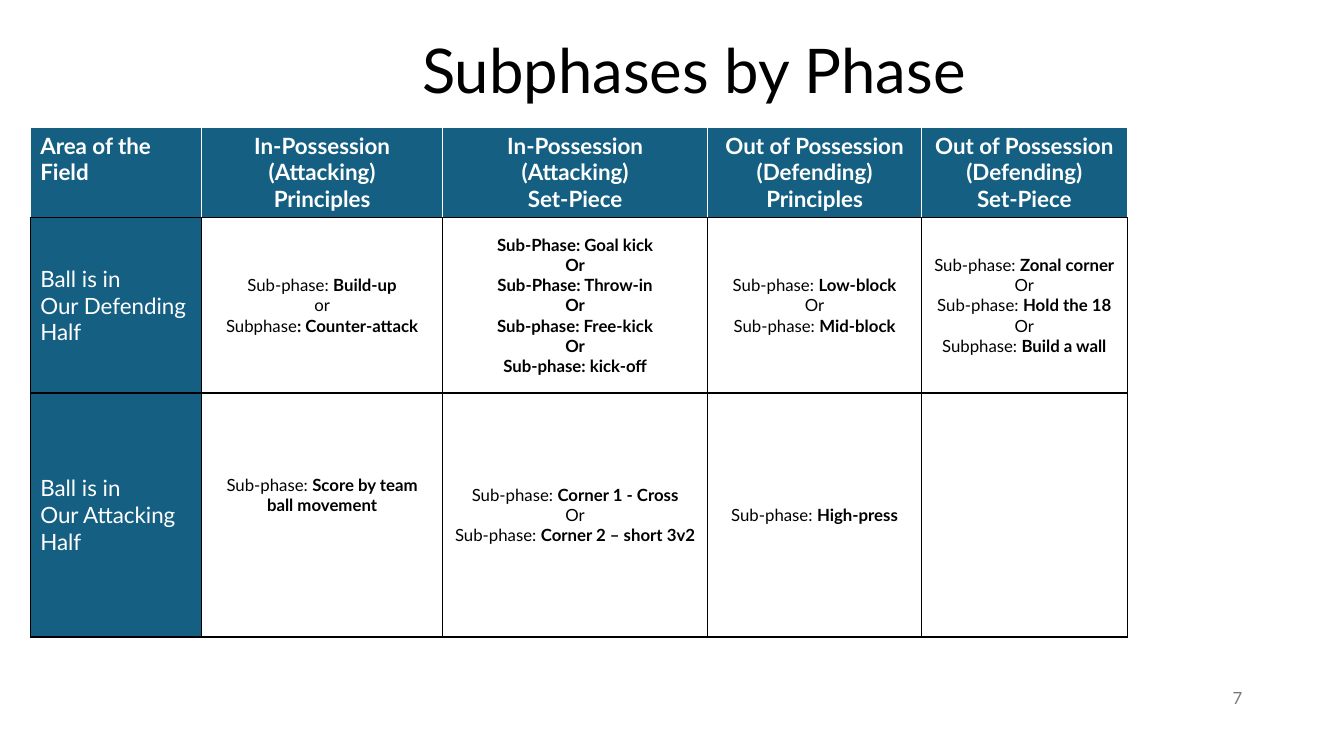
from lxml.etree import SubElement
from pptx import Presentation
from pptx.dml.color import RGBColor
from pptx.enum.text import MSO_ANCHOR, PP_ALIGN
from pptx.oxml.ns import qn
from pptx.util import Inches, Pt

FONT = "Lato"
BLACK = RGBColor(0x00, 0x00, 0x00)
WHITE = RGBColor(0xFF, 0xFF, 0xFF)
TEAL = RGBColor(0x15, 0x60, 0x82)
GREY = RGBColor(0x79, 0x79, 0x79)

COLUMN_WIDTHS = [1.7, 2.39, 2.63, 2.12, 2.04]
ROW_HEIGHTS = [0.81, 1.74, 2.42]

# Each cell is a list of paragraphs; text between asterisks is bold.
HEADINGS = [
    ["*Area of the Field*"],
    ["*In-Possession (Attacking)*", "*Principles*"],
    ["*In-Possession*", "*(Attacking)*", "*Set-Piece*"],
    ["*Out of Possession (Defending)*", "*Principles*"],
    ["*Out of Possession (Defending)*", "*Set-Piece*"],
]
DEFENDING_HALF = [
    ["Ball is in", "Our Defending Half"],
    ["Sub-phase: *Build-up*", "or", "Subphase*: Counter-attack*"],
    ["*Sub-Phase: Goal kick*", "*Or*", "*Sub-Phase: Throw-in*", "*Or*",
     "*Sub-phase: Free-kick*", "*Or*", "*Sub-phase: kick-off*"],
    ["Sub-phase: *Low-block*", "Or", "Sub-phase: *Mid-block*"],
    ["Sub-phase: *Zonal corner*", "Or", "Sub-phase: *Hold the 18*", "Or",
     "Subphase: *Build a wall*"],
]
ATTACKING_HALF = [
    ["Ball is in", "Our Attacking Half"],
    ["Sub-phase: *Score by team ball movement*"],
    ["Sub-phase: *Corner 1 - Cross*", "Or", "Sub-phase: *Corner 2 – short 3v2*"],
    ["Sub-phase: *High-press*"],
    [],
]


def write_paragraphs(frame, lines, size, color, align):
    for index, line in enumerate(lines):
        para = frame.paragraphs[0] if index == 0 else frame.add_paragraph()
        para.alignment = align
        for part, text in enumerate(line.split("*")):
            if text:
                span = para.add_run()
                span.text = text
                span.font.name = FONT
                span.font.size = Pt(size)
                span.font.bold = part % 2 == 1
                span.font.color.rgb = color


def add_text(page, left, top, width, height, text, size, color, align):
    box = page.shapes.add_textbox(Inches(left), Inches(top), Inches(width), Inches(height))
    frame = box.text_frame
    frame.word_wrap = True
    frame.vertical_anchor = MSO_ANCHOR.MIDDLE
    write_paragraphs(frame, [text], size, color, align)
    return box


def set_borders(cell, side_color, top_color):
    """Draw 1 pt borders; the bottom one is always black."""
    properties = cell._tc.get_or_add_tcPr()
    sides = {"L": side_color, "R": side_color, "T": top_color, "B": BLACK}
    for side, color in sides.items():
        line = SubElement(properties, qn(f"a:ln{side}"), w=str(Pt(1)))
        fill = SubElement(line, qn("a:solidFill"))
        SubElement(fill, qn("a:srgbClr"), val=str(color))


def fill_cell(cell, lines, is_heading, is_label):
    on_teal = is_heading or is_label
    edge = WHITE if is_heading else BLACK
    set_borders(cell, edge, edge)
    cell.fill.solid()
    cell.fill.fore_color.rgb = TEAL if on_teal else WHITE
    cell.vertical_anchor = MSO_ANCHOR.TOP if is_heading else MSO_ANCHOR.MIDDLE
    write_paragraphs(cell.text_frame, lines, 16 if on_teal else 12,
                     WHITE if on_teal else BLACK,
                     PP_ALIGN.LEFT if is_label else PP_ALIGN.CENTER)


def add_phase_table(page, left, top):
    rows = [HEADINGS, DEFENDING_HALF, ATTACKING_HALF]
    table = page.shapes.add_table(
        len(rows), len(COLUMN_WIDTHS), Inches(left), Inches(top),
        Inches(sum(COLUMN_WIDTHS)), Inches(sum(ROW_HEIGHTS))).table
    table.horz_banding = False
    for column, width in zip(table.columns, COLUMN_WIDTHS):
        column.width = Inches(width)
    for row, height in zip(table.rows, ROW_HEIGHTS):
        row.height = Inches(height)
    for r, cells in enumerate(rows):
        for c, lines in enumerate(cells):
            fill_cell(table.cell(r, c), lines, r == 0, c == 0)
    # The scoring sub-phase sits a little above the middle of its cell.
    table.cell(2, 1).margin_bottom = Inches(0.45)


def main():
    deck = Presentation()
    deck.slide_width, deck.slide_height = Inches(13.33), Inches(7.5)
    page = deck.slides.add_slide(deck.slide_layouts[6])
    title = add_text(page, 1.35, 0, 11.07, 1.45, "Subphases by Phase", 44, BLACK,
                     PP_ALIGN.CENTER)
    title.text_frame.paragraphs[0].line_spacing = 0.9
    add_text(page, 9.42, 6.72, 3, 0.4, "7", 12, GREY, PP_ALIGN.RIGHT)
    add_phase_table(page, 0.3, 1.26)
    deck.save("out.pptx")


if __name__ == "__main__":
    main()
